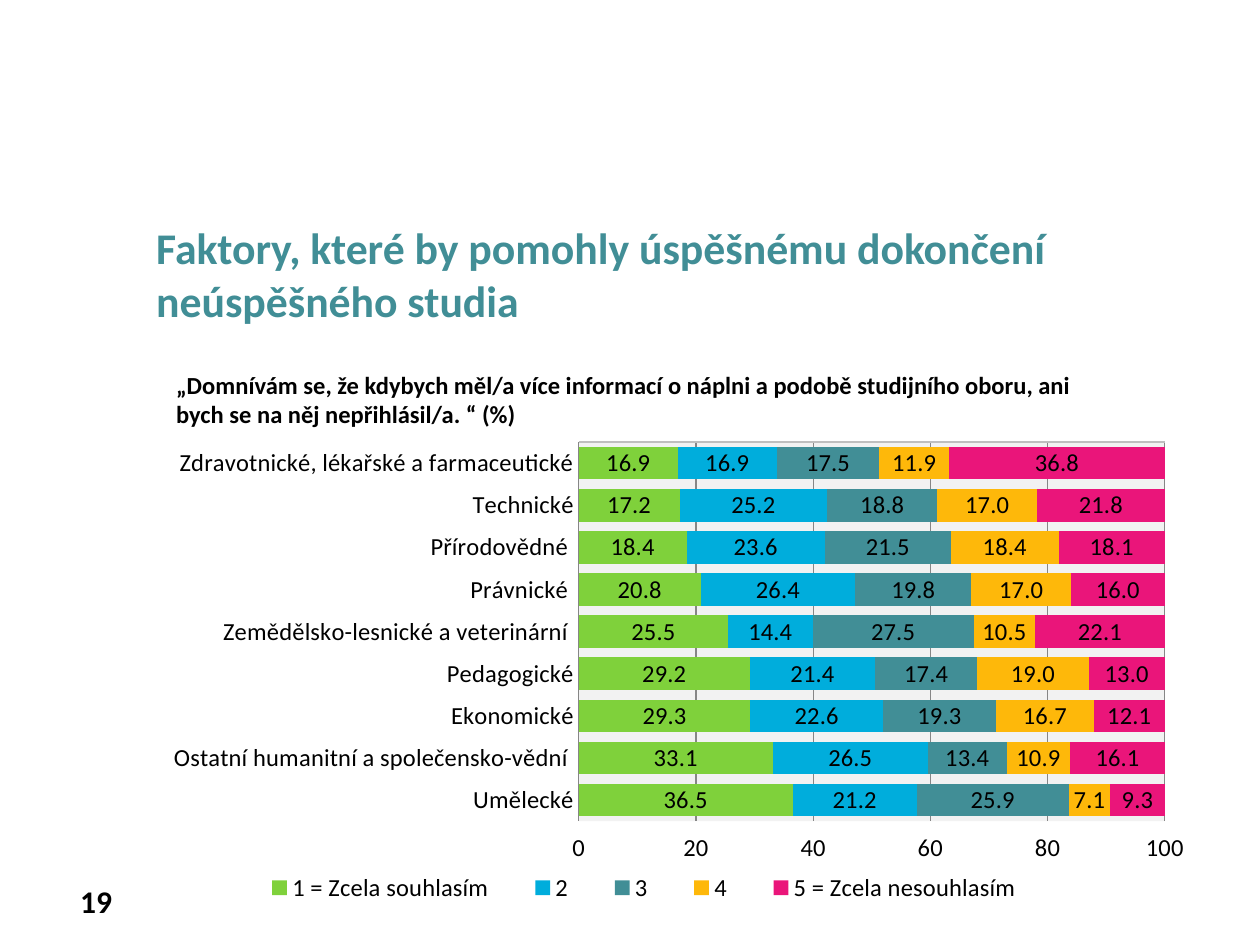
from dataclasses import dataclass

from pptx import Presentation
from pptx.chart.data import CategoryChartData
from pptx.dml.color import RGBColor
from pptx.enum.chart import (
    XL_CHART_TYPE as ChartType,
    XL_LABEL_POSITION as LabelPosition,
    XL_LEGEND_POSITION as LegendPosition,
    XL_TICK_LABEL_POSITION as TickLabelPosition,
    XL_TICK_MARK as TickMark,
)
from pptx.enum.text import PP_ALIGN as Align
from pptx.oxml import parse_xml
from pptx.oxml.ns import nsdecls, qn
from pptx.util import Cm, Pt


@dataclass(frozen=True)
class Theme:
    font: str = "Calibri"
    text: str = "000000"
    title: str = "418E96"
    plot: str = "F2F2F2"
    axis: str = "BFBFBF"
    grid: str = "868686"
    series: tuple = ("7FD13B", "00ADDC", "418E96", "FEB80A", "EA157A")
    title_size: int = 25
    number_size: int = 18
    body_size: int = 14


THEME = Theme()

ANSWERS = ["1 = Zcela souhlasím", "2", "3", "4", "5 = Zcela nesouhlasím"]
SHARES = {
    "Zdravotnické, lékařské a farmaceutické": (16.9, 16.9, 17.5, 11.9, 36.8),
    "Technické": (17.2, 25.2, 18.8, 17.0, 21.8),
    "Přírodovědné ": (18.4, 23.6, 21.5, 18.4, 18.1),
    "Právnické ": (20.8, 26.4, 19.8, 17.0, 16.0),
    "Zemědělsko-lesnické a veterinární ": (25.5, 14.4, 27.5, 10.5, 22.1),
    "Pedagogické": (29.2, 21.4, 17.4, 19.0, 13.0),
    "Ekonomické": (29.3, 22.6, 19.3, 16.7, 12.1),
    "Ostatní humanitní a společensko-vědní ": (33.1, 26.5, 13.4, 10.9, 16.1),
    "Umělecké": (36.5, 21.2, 25.9, 7.1, 9.3),
}


def apply(target, values):
    for name, value in values.items():
        setattr(target, name, value)


def style_font(font, size, color=THEME.text, bold=False):
    apply(font, {"name": THEME.font, "size": Pt(size), "bold": bold})
    font.color.rgb = RGBColor.from_string(color)


def style_line(line, color):
    line.width = Pt(0.75)
    line.color.rgb = RGBColor.from_string(color)


def add_text(slide, box, text, size, color=THEME.text, align=Align.LEFT):
    frame = slide.shapes.add_textbox(*map(Cm, box)).text_frame
    frame.word_wrap = True
    paragraph = frame.paragraphs[0]
    apply(paragraph, {"text": text, "alignment": align})
    style_font(paragraph.runs[0].font, size, color, bold=True)


def set_layout(element, index, target, **percents):
    """Place a chart part by percentages of the chart's size."""
    for old in element.findall(qn("c:layout")):
        element.remove(old)
    inner = '<c:layoutTarget val="inner"/>' if target == "inner" else ""
    modes = '<c:xMode val="edge"/><c:yMode val="edge"/>'
    sizes = "".join(
        f'<c:{name} val="{value / 100:.3f}"/>' for name, value in percents.items()
    )
    element.insert(index, parse_xml(
        f'<c:layout {nsdecls("c")}><c:manualLayout>{inner}{modes}{sizes}'
        "</c:manualLayout></c:layout>"
    ))


def style_axes(chart):
    category, value = chart.category_axis, chart.value_axis
    apply(category, {"reverse_order": True, "major_tick_mark": TickMark.NONE})
    apply(value, {
        "minimum_scale": 0,
        "maximum_scale": 100,
        "major_unit": 20,
        "major_tick_mark": TickMark.NONE,
        "tick_label_position": TickLabelPosition.HIGH,
        "has_major_gridlines": True,
    })
    apply(value.tick_labels, {"number_format": "0", "number_format_is_linked": False})
    style_line(category.format.line, THEME.grid)
    style_line(value.format.line, THEME.axis)
    style_line(value.major_gridlines.format.line, THEME.grid)


def style_series(plot):
    apply(plot, {"gap_width": 30, "overlap": 100, "vary_by_categories": False})
    for series, color in zip(plot.series, THEME.series):
        series.format.fill.solid()
        series.format.fill.fore_color.rgb = RGBColor.from_string(color)
        labels = series.data_labels
        apply(labels, {
            "show_value": True,
            "position": LabelPosition.CENTER,
            "number_format": "0.0",
            "number_format_is_linked": False,
        })
        style_font(labels.font, THEME.body_size)


def add_answer_chart(slide, box):
    data = CategoryChartData()
    data.categories = list(SHARES)
    for answer, values in zip(ANSWERS, zip(*SHARES.values())):
        data.add_series(answer, values)
    chart = slide.shapes.add_chart(
        ChartType.BAR_STACKED, *map(Cm, box), data
    ).chart
    apply(chart, {"has_title": False, "has_legend": True})
    style_font(chart.font, THEME.body_size)
    style_axes(chart)
    style_series(chart.plots[0])

    legend = chart.legend
    apply(legend, {"position": LegendPosition.BOTTOM, "include_in_layout": False})
    set_layout(legend._element, 1, "outer", x=7.6, y=89.6, w=78, h=9)

    plot_area = chart._chartSpace.chart.plotArea
    set_layout(plot_area, 0, "inner", x=40.4, y=1.8, w=55.7, h=78.5)
    plot_area.append(parse_xml(
        f'<c:spPr {nsdecls("c", "a")}><a:solidFill>'
        f'<a:srgbClr val="{THEME.plot}"/></a:solidFill></c:spPr>'
    ))


def main():
    presentation = Presentation()
    apply(presentation, {"slide_width": Cm(25.4), "slide_height": Cm(19.05)})
    slide = presentation.slides.add_slide(presentation.slide_layouts[6])
    add_text(slide, (0.71, 17.65, 1.8, 1.02), "19", THEME.number_size, align=Align.RIGHT)
    add_text(
        slide, (2.9, 4.33, 22.3, 1.4),
        "Faktory, které by pomohly úspěšnému dokončení neúspěšného studia",
        THEME.title_size, THEME.title,
    )
    add_answer_chart(slide, (3.1, 8.74, 21.21, 9.73))
    add_text(
        slide, (3.3, 7.33, 18.59, 1.45),
        "„Domnívám se, že kdybych měl/a více informací o náplni a podobě "
        "studijního oboru, ani bych se na něj nepřihlásil/a. “ (%)",
        THEME.body_size,
    )
    presentation.save("out.pptx")


if __name__ == "__main__":
    main()
